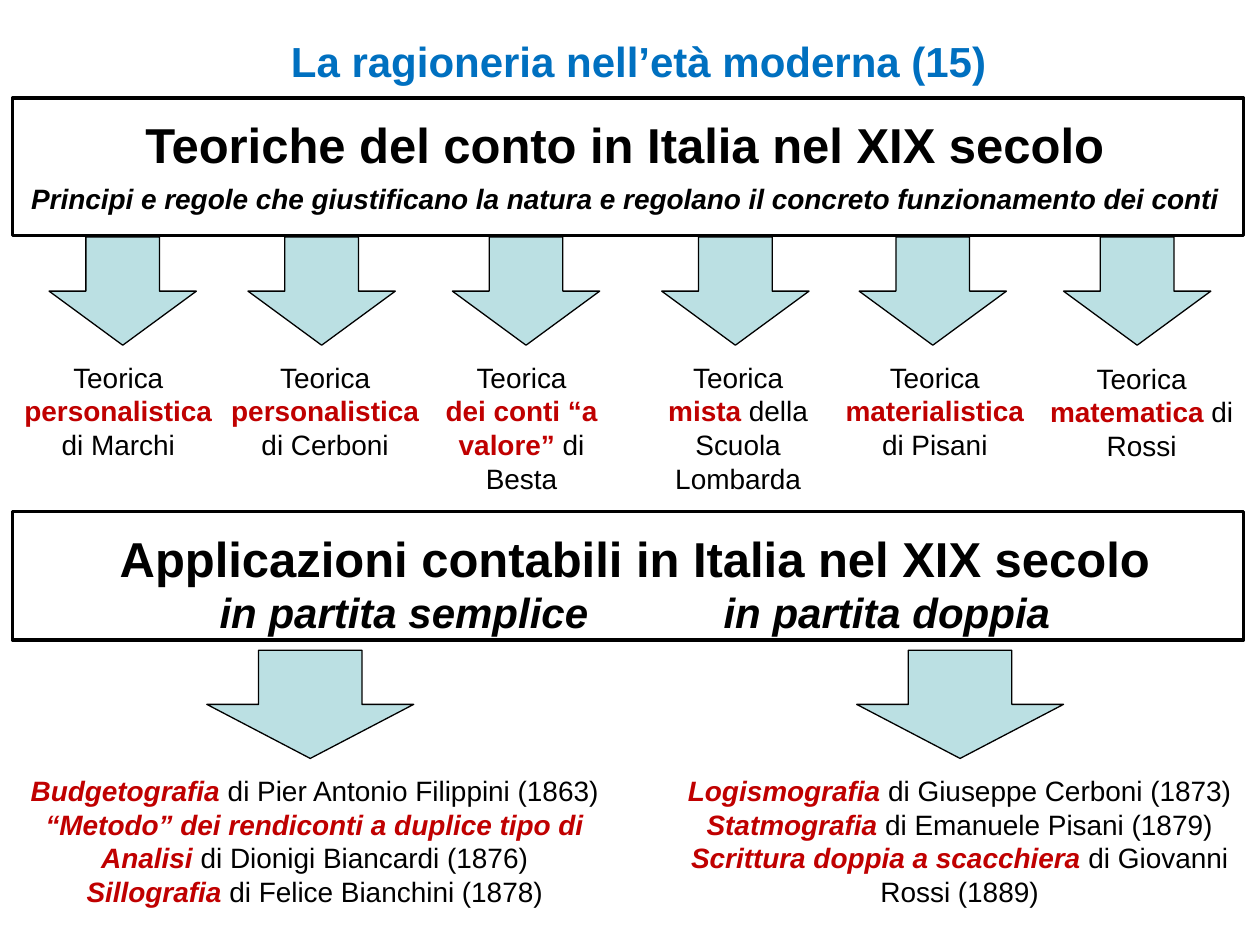
from dataclasses import dataclass

from lxml.etree import SubElement
from pptx import Presentation
from pptx.dml.color import RGBColor
from pptx.enum.shapes import MSO_SHAPE as Preset
from pptx.enum.text import MSO_ANCHOR as Anchor, MSO_AUTO_SIZE as AutoSize, PP_ALIGN as Align
from pptx.oxml.ns import qn
from pptx.util import Cm, Pt


@dataclass(frozen=True)
class Theme:
    font: str = "Arial"
    ink: RGBColor = RGBColor(0x00, 0x00, 0x00)
    title: RGBColor = RGBColor(0x00, 0x70, 0xC0)
    accent: RGBColor = RGBColor(0xC0, 0x00, 0x00)
    arrow: RGBColor = RGBColor(0xBB, 0xE0, 0xE3)
    heading_size: int = 28
    title_size: int = 24
    body_size: int = 16
    frame_line: float = 2
    arrow_line: float = 0.75


THEME = Theme()
STYLES = {
    "title": (THEME.title_size, THEME.title, True, False),
    "heading": (THEME.heading_size, THEME.ink, True, False),
    "method": (THEME.title_size, THEME.ink, True, True),
    "principle": (THEME.body_size, THEME.ink, True, True),
    "plain": (THEME.body_size, THEME.ink, False, False),
    "theory": (THEME.body_size, THEME.accent, True, False),
    "work": (THEME.body_size, THEME.accent, True, True),
}

TITLE = [[("La ragioneria nell’età moderna (15)", "title")]]
THEORIES_HEADING = [[("Teoriche del conto in Italia nel XIX secolo", "heading")]]
PRINCIPLES = [[(
    "Principi e regole che giustificano la natura e regolano il concreto funzionamento dei conti",
    "principle",
)]]
APPLICATIONS = [
    [("Applicazioni contabili in Italia nel XIX secolo", "heading")],
    [("in partita semplice\t\t\tin partita doppia", "method")],
]

# name, author, arrow left, text left, text top, text width, text height
THEORIES = [
    ("personalistica ", "di Marchi", 0.99, 0.2, 7.14, 4.37, 2.31),
    ("personalistica ", "di Cerboni", 5, 4.37, 7.14, 4.37, 2.31),
    ("dei conti “a valore”", " di Besta", 9.12, 8.33, 7.14, 4.37, 3),
    ("mista", " della Scuola Lombarda", 13.34, 12.9, 7.14, 3.96, 3),
    ("materialistica", " di Pisani", 17.32, 16.66, 7.14, 4.37, 2.31),
    ("matematica", " di Rossi", 21.44, 20.83, 7.16, 4.37, 2.31),
]

# arrow left, text left, text width, works
ENTRIES = [
    (4.17, 0.2, 12.29, [
        ("Budgetografia ", "di Pier Antonio Filippini (1863)"),
        ("“Metodo” dei rendiconti a duplice tipo di Analisi ", "di Dionigi Biancardi (1876)"),
        ("Sillografia ", "di Felice Bianchini (1878)"),
    ]),
    (17.27, 13.49, 11.71, [
        ("Logismografia ", "di Giuseppe Cerboni (1873)"),
        ("Statmografia ", "di Emanuele Pisani (1879)"),
        ("Scrittura doppia a scacchiera ", "di Giovanni Rossi (1889)"),
    ]),
]

FRAMES = [(0.25, 1.98, 24.82, 2.77), (0.25, 10.31, 24.82, 2.59)]
ARROW_HEIGHT = 2.18
THEORY_ARROW = (4.78, 2.97)
ENTRY_ARROW = (13.11, 4.17)
TAB_STOPS = [Cm(2.54 * inches) for inches in (3, 4, 5)]


def write(holder, paragraphs, anchor=Anchor.TOP, wrap=True, tabs=()):
    frame = holder.text_frame
    frame.word_wrap = wrap
    frame.auto_size = AutoSize.SHAPE_TO_FIT_TEXT
    frame.vertical_anchor = anchor
    for index, runs in enumerate(paragraphs):
        paragraph = frame.add_paragraph() if index else frame.paragraphs[0]
        properties = paragraph._p.get_or_add_pPr()
        properties.set("marL", "0")
        properties.set("indent", "0")
        SubElement(properties, qn("a:buNone"))
        if tabs:
            tab_list = SubElement(properties, qn("a:tabLst"))
            for stop in tabs:
                SubElement(tab_list, qn("a:tab"), pos=str(stop), algn="l")
        paragraph.alignment = Align.CENTER
        paragraph.space_before = Pt(0)
        for text, style in runs:
            size, color, bold, italic = STYLES[style]
            run = paragraph.add_run()
            run.text = text
            run.font.name = THEME.font
            run.font.size = Pt(size)
            run.font.color.rgb = color
            run.font.bold = bold
            run.font.italic = italic


def place(holder, left, top, width, height):
    holder.left, holder.top = Cm(left), Cm(top)
    holder.width, holder.height = Cm(width), Cm(height)


def add_text(slide, box, paragraphs, **options):
    write(slide.shapes.add_textbox(*map(Cm, box)), paragraphs, **options)


def add_outline(slide, preset, box, line_width, fill=None):
    outline = slide.shapes.add_shape(preset, *map(Cm, box))
    outline.shadow.inherit = False
    if fill is None:
        outline.fill.background()
    else:
        outline.fill.solid()
        outline.fill.fore_color.rgb = fill
    outline.line.color.rgb = THEME.ink
    outline.line.width = Pt(line_width)


def add_arrow(slide, left, top, width):
    box = (left, top, width, ARROW_HEIGHT)
    add_outline(slide, Preset.DOWN_ARROW, box, THEME.arrow_line, THEME.arrow)


def main():
    deck = Presentation()
    deck.slide_width, deck.slide_height = Cm(25.4), Cm(19.05)
    slide = deck.slides.add_slide(deck.slide_layouts.get_by_name("Two Content"))

    title, *lists = slide.placeholders
    place(title, 5.56, 0.58, 14.63, 1.3)
    write(title, TITLE, wrap=False)

    add_text(slide, (0.2, 3.53, 24.82, 0.94), PRINCIPLES, anchor=Anchor.MIDDLE)
    add_text(slide, (2.18, 2.18, 20.83, 1.45), THEORIES_HEADING)

    for name, author, arrow_left, left, top, width, height in THEORIES:
        add_arrow(slide, arrow_left, *THEORY_ARROW)
        theory = [[("Teorica", "plain")], [(name, "theory"), (author, "plain")]]
        add_text(slide, (left, top, width, height), theory)

    for frame in FRAMES:
        add_outline(slide, Preset.RECTANGLE, frame, THEME.frame_line)
    add_text(slide, (1.19, 10.52, 23.22, 2.49), APPLICATIONS, tabs=TAB_STOPS)

    for works_list, (arrow_left, left, width, works) in zip(lists, ENTRIES):
        add_arrow(slide, arrow_left, *ENTRY_ARROW)
        place(works_list, left, 15.47, width, 3)
        write(works_list, [[(work, "work"), (author, "plain")] for work, author in works])

    deck.save("out.pptx")


if __name__ == "__main__":
    main()
